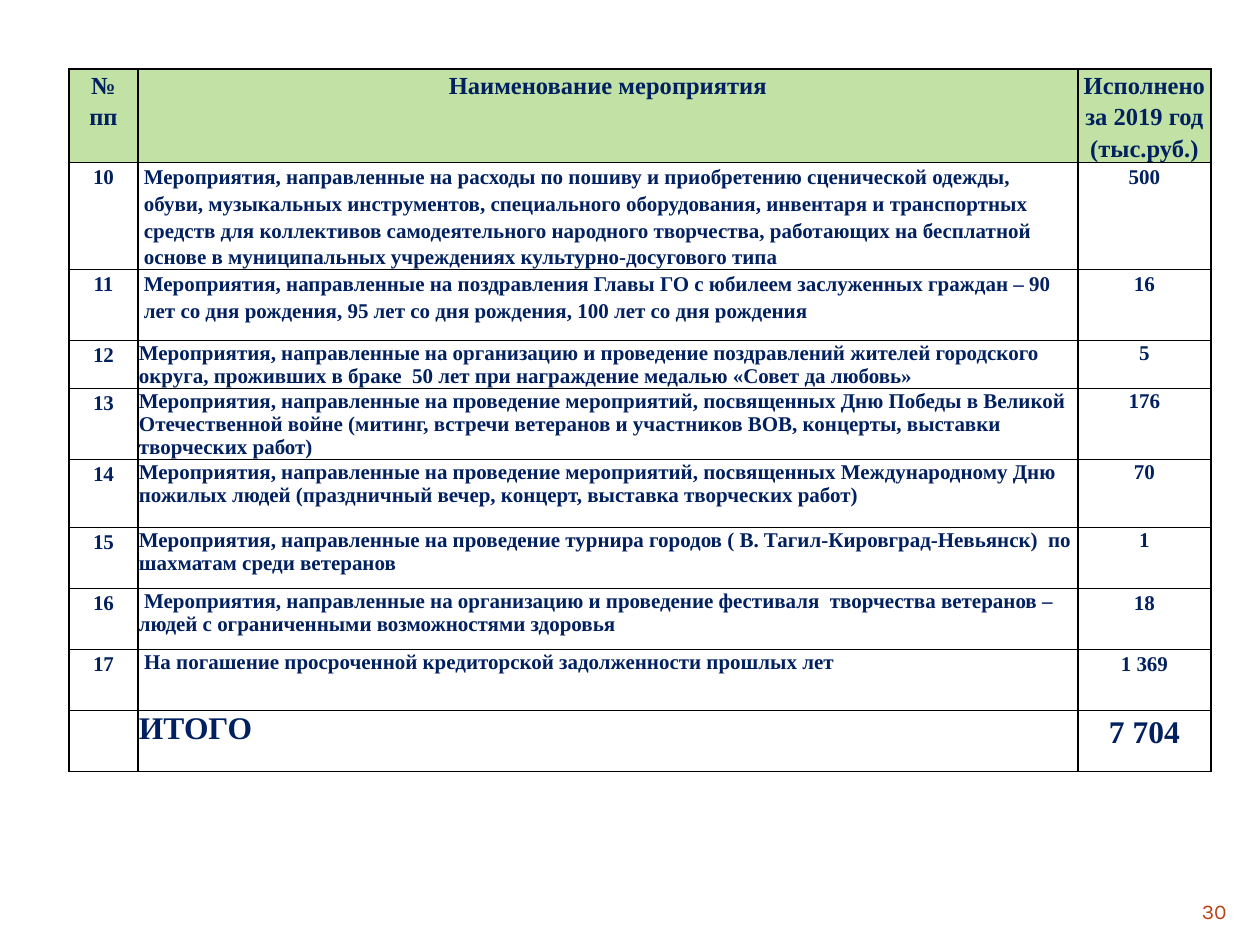
from dataclasses import dataclass

import lxml.etree
import pptx
import pptx.dml.color
import pptx.enum.text
import pptx.oxml.ns
import pptx.util

EMU_PER_PX = 914400 / 126
NAVY = pptx.dml.color.RGBColor(0x00, 0x20, 0x60)
GREEN = pptx.dml.color.RGBColor(0xC2, 0xE1, 0xA5)
RUST = pptx.dml.color.RGBColor(0xBA, 0x40, 0x14)
BLACK = pptx.dml.color.RGBColor(0x00, 0x00, 0x00)
LEFT = pptx.enum.text.PP_ALIGN.LEFT
CENTER = pptx.enum.text.PP_ALIGN.CENTER
RIGHT = pptx.enum.text.PP_ALIGN.RIGHT
COLUMN_WIDTHS = (69, 940, 133)


@dataclass(frozen=True)
class CellStyle:
    side: int
    top: int
    spacing: float


HEADING = CellStyle(side=5, top=0, spacing=1.15)
LOOSE = CellStyle(side=6, top=0, spacing=1.15)
TIGHT = CellStyle(side=1, top=1, spacing=1.0)


@dataclass(frozen=True)
class Entry:
    number: str
    name: str
    amount: str
    height: int
    name_style: CellStyle = TIGHT
    amount_style: CellStyle = TIGHT
    number_style: CellStyle = LOOSE
    name_align: pptx.enum.text.PP_ALIGN = LEFT
    size: int = 12
    fill: pptx.dml.color.RGBColor | None = None


ENTRIES = (
    Entry("№\nпп", "Наименование мероприятия", "Исполнено\nза 2019 год\n(тыс.руб.)", 93,
          HEADING, HEADING, HEADING, CENTER, 14, GREEN),
    Entry("10", "Мероприятия, направленные на расходы по пошиву и приобретению сценической "
          "одежды, обуви, музыкальных инструментов, специального оборудования, инвентаря и "
          "транспортных средств для коллективов самодеятельного народного творчества, "
          "работающих на бесплатной основе в муниципальных учреждениях "
          "культурно-досугового типа", "500", 107, LOOSE, LOOSE),
    Entry("11", "Мероприятия, направленные на поздравления Главы ГО с юбилеем заслуженных "
          "граждан – 90 лет со дня рождения, 95 лет со дня рождения, "
          "100 лет со дня рождения", "16", 71, LOOSE, LOOSE),
    Entry("12", "Мероприятия, направленные на организацию и проведение поздравлений жителей "
          "городского округа, проживших в браке  50 лет при награждение медалью "
          "«Совет да любовь»", "5", 48),
    Entry("13", "Мероприятия, направленные на проведение мероприятий, посвященных Дню Победы "
          "в Великой Отечественной войне (митинг, встречи ветеранов и участников ВОВ, "
          "концерты, выставки творческих работ)", "176", 71),
    Entry("14", "Мероприятия, направленные на проведение мероприятий, посвященных "
          "Международному Дню пожилых людей (праздничный вечер, концерт, выставка "
          "творческих работ)", "70", 68),
    Entry("15", "Мероприятия, направленные на проведение турнира городов "
          "( В. Тагил-Кировград-Невьянск)  по шахматам среди ветеранов", "1", 61),
    Entry("16", " Мероприятия, направленные на организацию и проведение фестиваля  творчества "
          "ветеранов – людей с ограниченными возможностями здоровья", "18", 61,
          amount_style=LOOSE),
    Entry("17", " На погашение просроченной кредиторской задолженности прошлых лет",
          "1 369", 61, amount_style=LOOSE),
    Entry("", "ИТОГО", "7 704", 61, amount_style=LOOSE, size=18),
)


def px(length: int) -> pptx.util.Emu:
    return pptx.util.Emu(round(length * EMU_PER_PX))


def write_text(frame, text: str, *, size: int, align, color=NAVY, font="Times New Roman",
               bold=True, spacing=1.0) -> None:
    frame.word_wrap = True
    for index, line in enumerate(text.split("\n")):
        paragraph = frame.paragraphs[0] if index == 0 else frame.add_paragraph()
        paragraph.alignment = align
        paragraph.line_spacing = spacing
        if not line:
            paragraph.font.size = pptx.util.Pt(size)
            continue
        run = paragraph.add_run()
        run.text = line
        run.font.size = pptx.util.Pt(size)
        run.font.name = font
        run.font.bold = bold
        run.font.color.rgb = color


def draw_borders(cell) -> None:
    """Add a thin black line on every side, ahead of the cell's fill."""
    properties = cell._tc.get_or_add_tcPr()
    qn = pptx.oxml.ns.qn
    for position, side in enumerate(("lnL", "lnR", "lnT", "lnB")):
        line = lxml.etree.Element(qn(f"a:{side}"), w=str(pptx.util.Pt(1)))
        fill = lxml.etree.SubElement(line, qn("a:solidFill"))
        lxml.etree.SubElement(fill, qn("a:srgbClr"), val=str(BLACK))
        properties.insert(position, line)


def fill_cell(cell, text: str, style: CellStyle, align, entry: Entry) -> None:
    cell.margin_left = cell.margin_right = px(style.side)
    cell.margin_top, cell.margin_bottom = px(style.top), 0
    if entry.fill is None:
        cell.fill.background()
    else:
        cell.fill.solid()
        cell.fill.fore_color.rgb = entry.fill
    draw_borders(cell)
    write_text(cell.text_frame, text, size=entry.size, align=align, spacing=style.spacing)


def draw_expenses(slide, left: int, top: int) -> None:
    height = sum(entry.height for entry in ENTRIES)
    expenses = slide.shapes.add_table(len(ENTRIES), len(COLUMN_WIDTHS), px(left), px(top),
                                      px(sum(COLUMN_WIDTHS)), px(height)).table
    expenses.first_row = expenses.horz_banding = False
    for column, width in zip(expenses.columns, COLUMN_WIDTHS):
        column.width = px(width)
    for row, entry in zip(expenses.rows, ENTRIES):
        row.height = px(entry.height)
        number, name, amount = row.cells
        fill_cell(number, entry.number, entry.number_style, CENTER, entry)
        fill_cell(name, entry.name, entry.name_style, entry.name_align, entry)
        fill_cell(amount, entry.amount, entry.amount_style, CENTER, entry)


def main() -> None:
    deck = pptx.Presentation()
    deck.slide_width, deck.slide_height = px(1260), px(945)
    slide = deck.slides.add_slide(deck.slide_layouts[6])

    # Table of events and spending
    draw_expenses(slide, left=69, top=69)

    # Page number
    page_number = slide.shapes.add_textbox(px(1134), px(892), px(105), px(34))
    write_text(page_number.text_frame, "30", size=12, align=RIGHT, color=RUST,
               font="Karla", bold=False)

    deck.save("out.pptx")


if __name__ == "__main__":
    main()
